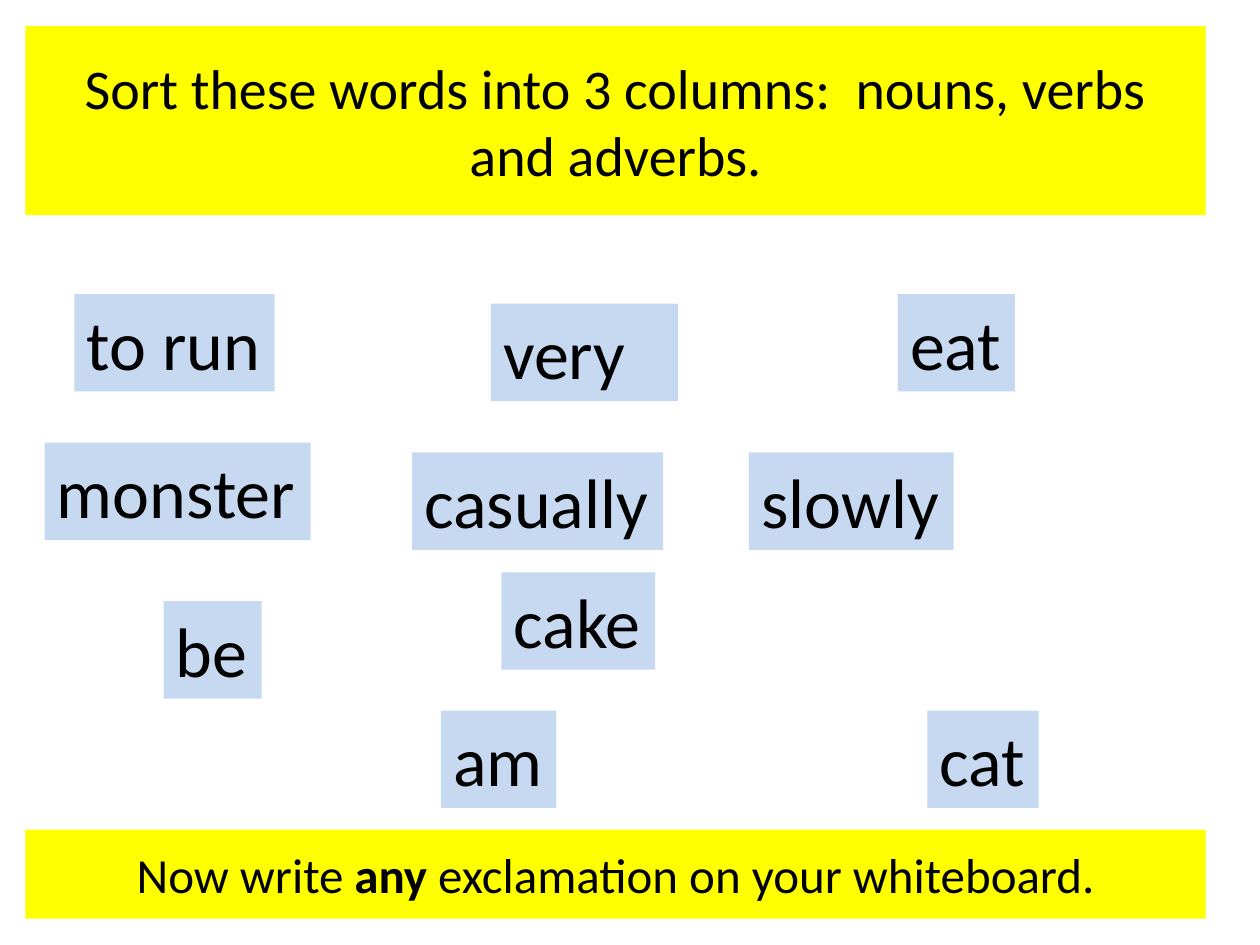
"""Build a word-sorting slide with two banners and scattered word cards."""
from dataclasses import dataclass
from typing import Any

import pptx
import pptx.dml.color
import pptx.enum.text
import pptx.util

Pt = pptx.util.Pt
RGB = pptx.dml.color.RGBColor
Align = pptx.enum.text.PP_ALIGN
Anchor = pptx.enum.text.MSO_ANCHOR
Fit = pptx.enum.text.MSO_AUTO_SIZE


@dataclass(frozen=True)
class Theme:
    face: str = "Calibri"
    ink: RGB = RGB(0, 0, 0)
    band: RGB = RGB(0xFF, 0xFF, 0)
    card: RGB = RGB(0xC6, 0xD9, 0xF1)
    head: float = 32
    foot: float = 28
    word: float = 40


@dataclass(frozen=True)
class Card:
    word: str
    left: float
    top: float
    width: float
    wrap: bool = False


@dataclass(frozen=True)
class Band:
    top: float
    height: float
    size: float
    runs: tuple[tuple[str, bool], ...]


THEME = Theme()
EDGE, SPAN, TALL = 14.5, 674.5, 55.7
HEAD = Band(15, 108, THEME.head,
            (("Sort these words into 3 columns:  nouns, verbs and adverbs.", False),))
FOOT = Band(474, 51, THEME.foot,
            (("Now write ", False), ("any", True),
             (" exclamation on your whiteboard.", False)))
CARDS = (
    Card("to run", 42.5, 168, 114.5),
    Card("very", 280.5, 173.5, 107, True),
    Card("eat", 513, 168, 67),
    Card("monster", 25.5, 253, 152),
    Card("casually", 235.5, 258.5, 143.5),
    Card("slowly", 428, 258.5, 117),
    Card("be", 93.5, 343.5, 56),
    Card("cake", 286.5, 327, 88),
    Card("am", 252, 406, 66),
    Card("cat", 530, 406, 63.5),
)


def apply(target: Any, values: dict[str, Any]) -> None:
    """Set each named attribute on the target."""
    for name, value in values.items():
        setattr(target, name, value)


def paint(shape: Any, color: RGB) -> None:
    """Fill the shape with one solid colour."""
    shape.fill.solid()
    shape.fill.fore_color.rgb = color


def write(para: Any, text: str, size: float, bold: bool = False) -> None:
    """Add one styled run to a paragraph."""
    run = para.add_run()
    run.text = text
    apply(run.font, {"name": THEME.face, "size": Pt(size), "bold": bold})
    run.font.color.rgb = THEME.ink


def draw_band(shape: Any, band: Band) -> None:
    """Place a full-width banner and write its centred text."""
    apply(shape, {"left": Pt(EDGE), "top": Pt(band.top),
                  "width": Pt(SPAN), "height": Pt(band.height)})
    paint(shape, THEME.band)
    frame = shape.text_frame
    apply(frame, {"word_wrap": True, "auto_size": Fit.NONE,
                  "vertical_anchor": Anchor.MIDDLE})
    para = frame.paragraphs[0]
    para.alignment = Align.CENTER
    for text, bold in band.runs:
        write(para, text, band.size, bold)


def draw_card(slide: Any, card: Card) -> None:
    """Draw one word on its card."""
    shape = slide.shapes.add_textbox(
        Pt(card.left), Pt(card.top), Pt(card.width), Pt(TALL))
    paint(shape, THEME.card)
    frame = shape.text_frame
    apply(frame, {"word_wrap": card.wrap, "auto_size": Fit.SHAPE_TO_FIT_TEXT})
    write(frame.paragraphs[0], card.word, THEME.word)


def main() -> None:
    """Build the slide and save it."""
    deck = pptx.Presentation()
    apply(deck, {"slide_width": Pt(720), "slide_height": Pt(540)})
    slide = deck.slides.add_slide(deck.slide_layouts[5])
    draw_band(slide.shapes.title, HEAD)
    for card in CARDS:
        draw_card(slide, card)
    foot = slide.shapes.add_textbox(Pt(EDGE), Pt(FOOT.top), Pt(SPAN), Pt(FOOT.height))
    draw_band(foot, FOOT)
    deck.save("out.pptx")


if __name__ == "__main__":
    main()
